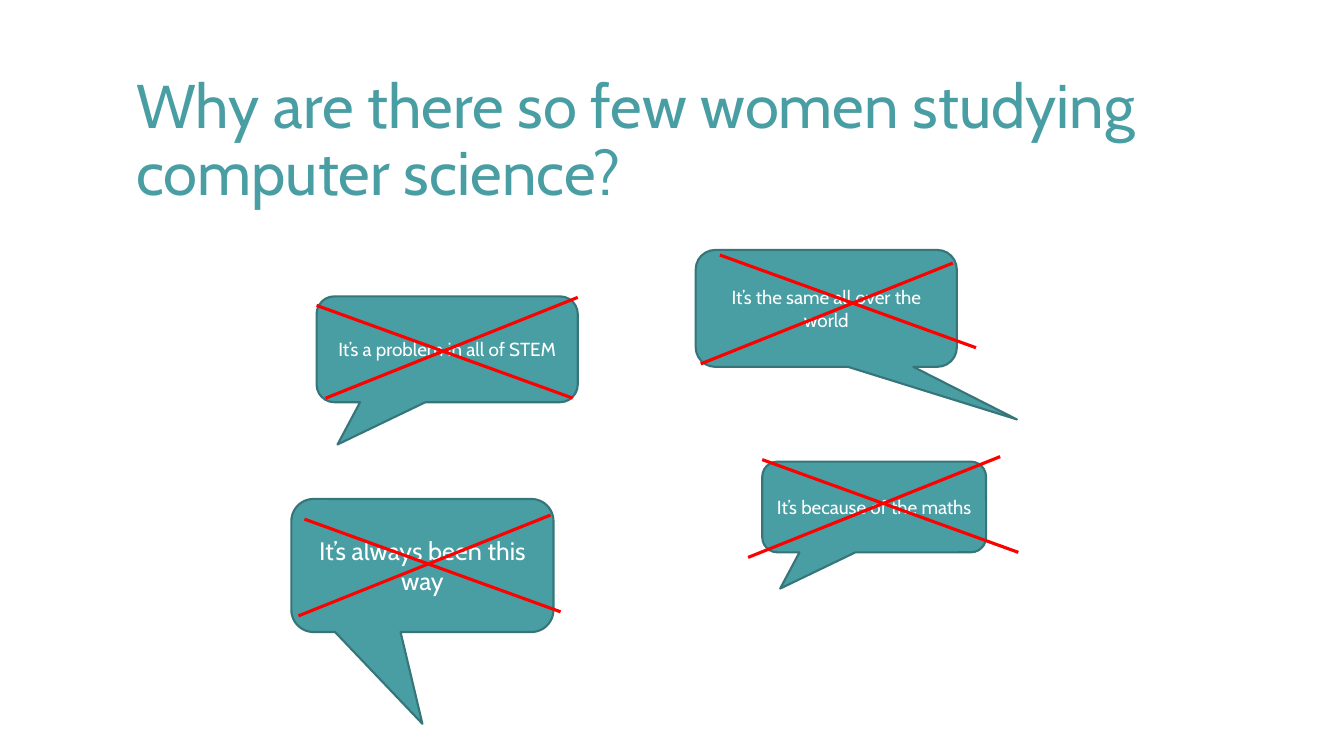
"""Build a slide of crossed-out explanations in speech bubbles."""
from pptx import Presentation
from pptx.dml.color import RGBColor
from pptx.enum.shapes import MSO_CONNECTOR, MSO_SHAPE
from pptx.enum.text import MSO_ANCHOR, MSO_AUTO_SIZE, PP_ALIGN
from pptx.oxml.ns import qn
from pptx.util import Inches, Pt
from lxml import etree

TEAL = RGBColor(0x49, 0x9E, 0xA3)
DARK_TEAL = RGBColor(0x36, 0x75, 0x79)
WHITE = RGBColor(0xFF, 0xFF, 0xFF)
RED = RGBColor(0xFF, 0x00, 0x00)
FONT = "Cabin"
BUBBLE = MSO_SHAPE.ROUNDED_RECTANGULAR_CALLOUT
STRAIGHT = MSO_CONNECTOR.STRAIGHT
MIDDLE = MSO_ANCHOR.MIDDLE
LEFT, CENTER = PP_ALIGN.LEFT, PP_ALIGN.CENTER
NO_AUTOFIT = MSO_AUTO_SIZE.NONE

QUESTION = "Why are there so few women studying computer science?"
FALLING = (2.54, 0.92)
RISING = (2.5, -1.0)
SMALL_INSETS = (0.07, 0.04)
WIDE_INSETS = (0.1, 0.05)

# text, box, tail tip, font size, insets, start of falling and rising stroke
EXCUSES = [
    ("It’s a problem in all of STEM", (3.14, 2.94, 2.59, 1.05),
     (-0.42, 0.9), 13.5, SMALL_INSETS, (3.14, 3.03), (3.23, 3.95)),
    ("It’s the same all over the world", (6.9, 2.48, 2.59, 1.16),
     (0.73, 0.95), 13.5, SMALL_INSETS, (7.14, 2.53), (6.95, 3.61)),
    ("It’s because of the maths", (7.56, 4.58, 2.22, 0.9),
     (-0.42, 0.9), 13.5, SMALL_INSETS, (7.56, 4.56), (7.42, 5.53)),
    ("It’s always been this way", (2.89, 4.95, 2.6, 1.32),
     (0, 1.19), 18, WIDE_INSETS, (3.02, 5.15), (2.96, 6.11)),
]


def write(frame, text, size, color, align):
    frame.word_wrap = True
    frame.vertical_anchor = MIDDLE
    paragraph = frame.paragraphs[0]
    paragraph.alignment = align
    run = paragraph.add_run()
    run.text = text
    run.font.name = FONT
    run.font.size = Pt(size)
    run.font.color.rgb = color
    return paragraph


def add_bubble(slide, text, box, tail, size, insets):
    bubble = slide.shapes.add_shape(BUBBLE, *map(Inches, box))
    bubble.shadow.inherit = False
    bubble.adjustments[0], bubble.adjustments[1] = tail
    bubble.fill.solid()
    bubble.fill.fore_color.rgb = TEAL
    bubble.line.color.rgb = DARK_TEAL
    bubble.line.width = Pt(1.5)
    frame = bubble.text_frame
    frame.margin_left = frame.margin_right = Inches(insets[0])
    frame.margin_top = frame.margin_bottom = Inches(insets[1])
    write(frame, text, size, WHITE, CENTER)


def add_stroke(slide, start, span):
    end = (start[0] + span[0], start[1] + span[1])
    stroke = slide.shapes.add_connector(STRAIGHT, *map(Inches, start + end))
    stroke.line.color.rgb = RED
    stroke.line.width = Pt(2.25)
    etree.SubElement(stroke._element.spPr, qn("a:effectLst"))


def main():
    deck = Presentation()
    deck.slide_width, deck.slide_height = Inches(13.33), Inches(7.5)
    slide = deck.slides.add_slide(deck.slide_layouts[5])

    title = slide.shapes.title
    title.left, title.top = Inches(1.25), Inches(0.67)
    title.width, title.height = Inches(10.8), Inches(1.48)
    title.text_frame.auto_size = NO_AUTOFIT
    write(title.text_frame, QUESTION, 44, TEAL, LEFT).line_spacing = 0.9

    for text, box, tail, size, insets, falling, rising in EXCUSES:
        add_bubble(slide, text, box, tail, size, insets)
        add_stroke(slide, falling, FALLING)
        add_stroke(slide, rising, RISING)

    deck.save("out.pptx")


if __name__ == "__main__":
    main()
